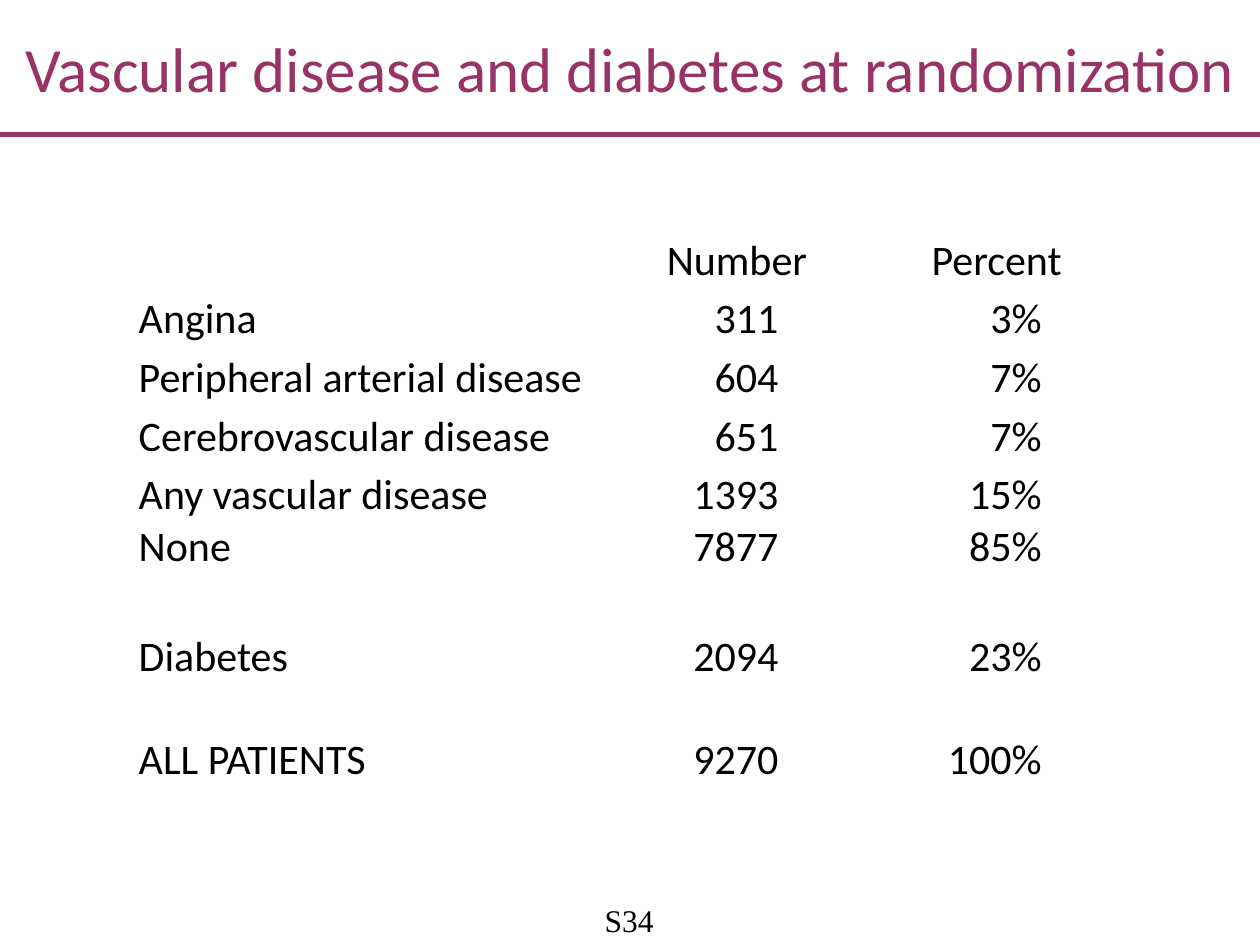
from lxml.etree import SubElement
from pptx import Presentation
from pptx.dml.color import RGBColor
from pptx.enum.shapes import MSO_CONNECTOR as Connector
from pptx.enum.text import MSO_ANCHOR as Anchor, PP_ALIGN as Align
from pptx.oxml.ns import qn
from pptx.util import Pt

PLUM = RGBColor(0x99, 0x33, 0x66)
BLACK = RGBColor(0, 0, 0)

TITLE_FONT = {"name": "Calibri", "size": Pt(36)}
TABLE_FONT = {"name": "Calibri", "size": Pt(24)}
NUMBER_FONT = {"name": "Times New Roman", "size": Pt(18)}
INSETS = ("margin_left", "margin_top", "margin_right", "margin_bottom")

COLUMN_WIDTHS = (270.6, 148.4, 148.4)
COLUMN_ALIGNS = (Align.LEFT, Align.RIGHT, Align.RIGHT)
RIGHT_INSETS = (3, 50.5, 48.5)
TALL, SHORT = 33.5, 29.5
ROWS = (
    (TALL, ("", "Number", "Percent")),
    (TALL, ("Angina", "311", "3%")),
    (TALL, ("Peripheral arterial disease", "604", "7%")),
    (TALL, ("Cerebrovascular disease", "651", "7%")),
    (TALL, ("Any vascular disease", "1393", "15%")),
    (SHORT, ("None", "7877", "85%")),
    (SHORT, ("", "", "")),
    (TALL, ("Diabetes", "2094", "23%")),
    (SHORT, ("", "", "")),
    (SHORT, ("ALL PATIENTS", "9270", "100%")),
)


def set_values(target, values):
    """Set each attribute in values on target."""
    for name, value in values.items():
        setattr(target, name, value)


def write(para, text, align, font, color):
    """Put one formatted span into a paragraph."""
    para.alignment = align
    span = para.add_run()
    span.text = text
    set_values(span.font, font)
    span.font.color.rgb = color


def add_label(page, bounds, text, font, color, wrap):
    """Place centred text within the given bounds."""
    box = page.shapes.add_textbox(*map(Pt, bounds))
    frame = box.text_frame
    set_values(frame, dict.fromkeys(INSETS, 0))
    set_values(frame, {"word_wrap": wrap, "vertical_anchor": Anchor.MIDDLE})
    write(frame.paragraphs[0], text, Align.CENTER, font, color)


def add_header(page, left, top, width, height):
    """Place the title with a rule along the bottom of its box."""
    bottom = top + height
    rule = page.shapes.add_connector(
        Connector.STRAIGHT, Pt(left), Pt(bottom), Pt(left + width), Pt(bottom))
    set_values(rule.line, {"width": Pt(3)})
    rule.line.color.rgb = PLUM
    SubElement(rule._element.spPr, qn("a:effectLst"))
    add_label(page, (left, top, width, height),
              "Vascular disease and diabetes at randomization",
              TITLE_FONT, PLUM, True)


def add_patient_table(page, left, top):
    """Place the table of patient counts from its top left corner."""
    width = sum(COLUMN_WIDTHS)
    height = sum(row_height for row_height, _ in ROWS)
    table = page.shapes.add_table(
        len(ROWS), len(COLUMN_WIDTHS), *map(Pt, (left, top, width, height))).table
    set_values(table, {"first_row": False, "horz_banding": False})
    for column, column_width in zip(table.columns, COLUMN_WIDTHS):
        column.width = Pt(column_width)
    for row, (row_height, texts) in zip(table.rows, ROWS):
        row.height = Pt(row_height)
        for cell, text, align, inset in zip(row.cells, texts, COLUMN_ALIGNS, RIGHT_INSETS):
            is_heading = row_height == TALL and texts is ROWS[0][1]
            side = 3 if is_heading else inset
            set_values(cell, dict(zip(INSETS, map(Pt, (3, 0, side, 0)))))
            cell.vertical_anchor = Anchor.BOTTOM
            cell.fill.background()
            para = cell.text_frame.paragraphs[0]
            if text:
                write(para, text, Align.CENTER if is_heading else align, TABLE_FONT, BLACK)
            else:
                para.font.size = TABLE_FONT["size"]


def main():
    """Build and save the slide."""
    deck = Presentation()
    set_values(deck, {"slide_width": Pt(720), "slide_height": Pt(540)})
    page = deck.slides.add_slide(deck.slide_layouts[6])
    add_header(page, 0, 0, 720, 77)
    add_patient_table(page, 76.3, 130.3)
    add_label(page, (344, 515, 31, 21.6), "S34", NUMBER_FONT, BLACK, False)
    deck.save("out.pptx")


if __name__ == "__main__":
    main()
